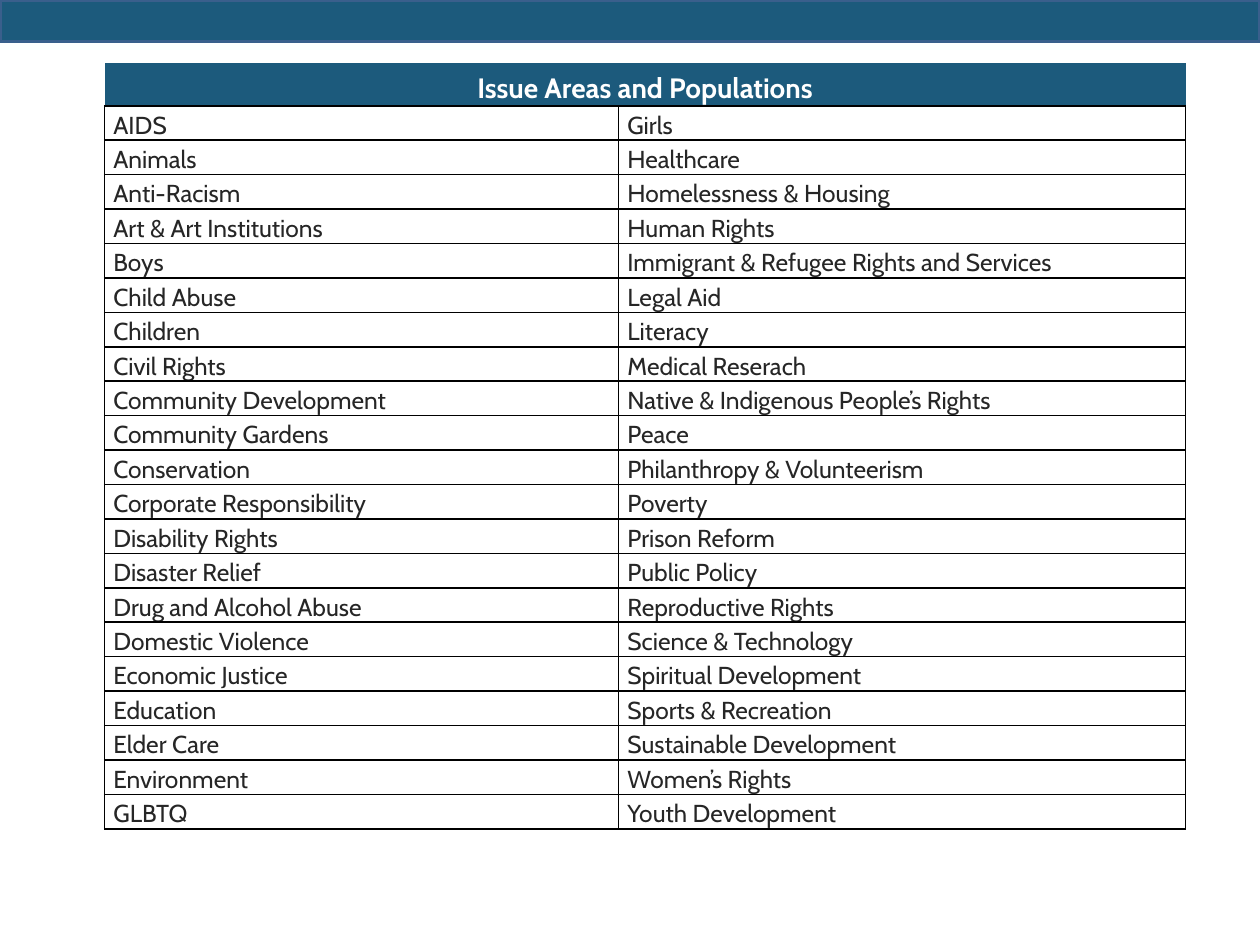
from lxml.etree import SubElement
from pptx import Presentation
from pptx.dml.color import RGBColor
from pptx.enum.shapes import MSO_SHAPE
from pptx.enum.text import MSO_ANCHOR, PP_ALIGN
from pptx.oxml.ns import qn
from pptx.util import Inches, Pt

COLORS = {"band": "1C5A7C", "band_line": "3A5F8C", "text": "262626",
          "white": "FFFFFF", "grid": "000000"}
FONT = "Cabin"
HEADING = "Issue Areas and Populations"
ISSUES = [
    ("AIDS", "Girls"),
    ("Animals", "Healthcare"),
    ("Anti-Racism", "Homelessness & Housing"),
    ("Art & Art Institutions", "Human Rights"),
    ("Boys", "Immigrant & Refugee Rights and Services"),
    ("Child Abuse", "Legal Aid"),
    ("Children", "Literacy"),
    ("Civil Rights", "Medical Reserach"),
    ("Community Development", "Native & Indigenous People’s Rights"),
    ("Community Gardens", "Peace"),
    ("Conservation", "Philanthropy & Volunteerism"),
    ("Corporate Responsibility", "Poverty"),
    ("Disability Rights", "Prison Reform"),
    ("Disaster Relief", "Public Policy"),
    ("Drug and Alcohol Abuse", "Reproductive Rights"),
    ("Domestic Violence", "Science & Technology"),
    ("Economic Justice", "Spiritual Development"),
    ("Education", "Sports & Recreation"),
    ("Elder Care", "Sustainable Development"),
    ("Environment", "Women’s Rights"),
    ("GLBTQ", "Youth Development"),
]


def color(name):
    """Return the named colour."""
    return RGBColor.from_string(COLORS[name])


def set_borders(cell, visible):
    """Draw the visible sides of a cell and hide the others."""
    properties = cell._tc.get_or_add_tcPr()
    for side in ("L", "R", "T", "B"):
        line = SubElement(properties, qn(f"a:ln{side}"), w=str(Pt(1)))
        if side in visible:
            fill = SubElement(line, qn("a:solidFill"))
            SubElement(fill, qn("a:srgbClr"), val=COLORS["grid"])
        else:
            SubElement(line, qn("a:noFill"))


def format_cell(cell, text, size, text_color, bold=False, fill=None, borders="LRTB"):
    """Write one table cell with its text, borders and fill."""
    set_borders(cell, borders)
    if fill:
        cell.fill.solid()
        cell.fill.fore_color.rgb = color(fill)
    else:
        cell.fill.background()
    cell.margin_left = cell.margin_right = Inches(0.07)
    cell.margin_top = cell.margin_bottom = 0
    cell.vertical_anchor = MSO_ANCHOR.BOTTOM
    para = cell.text_frame.paragraphs[0]
    para.text = text
    para.font.name = FONT
    para.font.size = Pt(size)
    para.font.bold = bold
    para.font.color.rgb = color(text_color)
    return para


def add_top_band(page, left, top, width, height):
    """Add the coloured band across the top of the page."""
    band = page.shapes.add_shape(MSO_SHAPE.RECTANGLE, left, top, width, height)
    band.shadow.inherit = False
    band.fill.solid()
    band.fill.fore_color.rgb = color("band")
    band.line.color.rgb = color("band_line")
    band.line.width = Pt(2)


def add_issue_table(page, left, top, width, height):
    """Add the two-column list of issues under a merged heading."""
    table = page.shapes.add_table(len(ISSUES) + 1, 2, left, top, width, height).table
    table.horz_banding = False
    table.first_row = False
    table.columns[0].width = Inches(4.08)
    table.columns[1].width = width - Inches(4.08)
    heading_height = Inches(0.34)
    table.rows[0].height = heading_height
    table.cell(0, 0).merge(table.cell(0, 1))
    for column, text in enumerate((HEADING, "")):
        para = format_cell(table.cell(0, column), text, 16, "white",
                           bold=True, fill="band", borders="B")
        para.alignment = PP_ALIGN.CENTER
    for row, pair in enumerate(ISSUES, start=1):
        table.rows[row].height = (height - heading_height) // len(ISSUES)
        for column, text in enumerate(pair):
            para = format_cell(table.cell(row, column), text, 14, "text")
            para.line_spacing = 1.15


def main():
    """Build the deck and save it."""
    deck = Presentation()
    deck.slide_width, deck.slide_height = Inches(10), Inches(7.5)
    page = deck.slides.add_slide(deck.slide_layouts[6])
    add_top_band(page, 0, 0, deck.slide_width, Inches(0.33))
    add_issue_table(page, Inches(0.83), Inches(0.5), Inches(8.58), Inches(6.08))
    deck.save("out.pptx")


if __name__ == "__main__":
    main()
